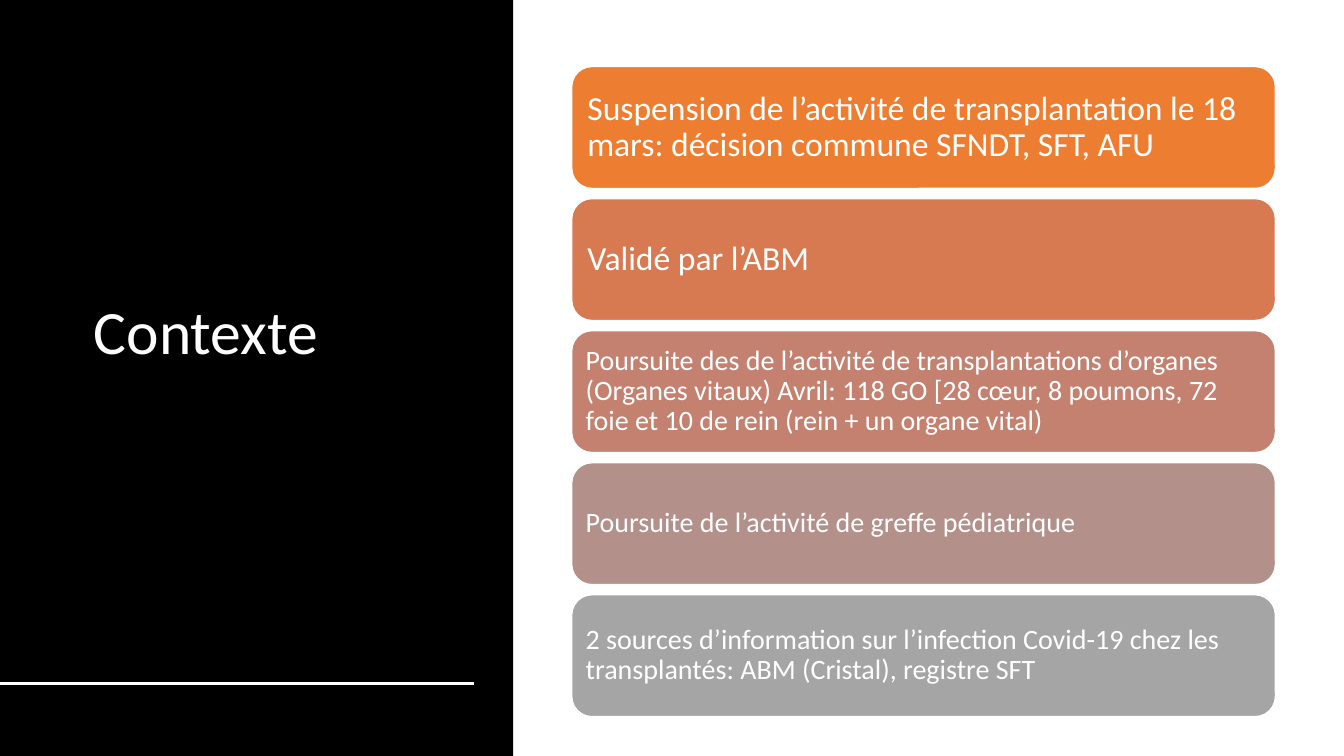
from lxml.etree import SubElement
from pptx import Presentation
from pptx.dml.color import RGBColor
from pptx.enum.shapes import MSO_CONNECTOR, MSO_SHAPE
from pptx.enum.text import MSO_ANCHOR, MSO_AUTO_SIZE, PP_ALIGN
from pptx.oxml.ns import qn
from pptx.util import Inches, Pt

TITLE = "Contexte"
CARDS = [
    ("Suspension de l’activité de transplantation le 18 mars: "
     "décision commune SFNDT, SFT, AFU", 24, "ED7D31"),
    ("Validé par l’ABM", 24, "D87A51"),
    ("Poursuite des de l’activité de transplantations d’organes "
     "(Organes vitaux) Avril: 118 GO [28 cœur, 8 poumons, 72 foie "
     "et 10 de rein (rein + un organe vital)", 20, "C48170"),
    ("Poursuite de l’activité de greffe pédiatrique", 20, "B4908B"),
    ("2 sources d’information sur l’infection Covid-19 chez les "
     "transplantés: ABM (Cristal), registre SFT", 20, "A5A5A5"),
]
WHITE, BLACK = "FFFFFF", "000000"
LEFT, TOP, WIDTH, HEIGHT, STEP = 5.67, 0.66, 6.98, 1.21, 1.31


def paint(target, color):
    target.solid()
    target.fore_color.rgb = RGBColor.from_string(color)


def write(shape, text, size=20, color=WHITE, font="Calibri", inset=0.1):
    frame = shape.text_frame
    frame.text = text
    frame.word_wrap = True
    frame.auto_size = MSO_AUTO_SIZE.NONE
    frame.vertical_anchor = MSO_ANCHOR.MIDDLE
    frame.margin_left = frame.margin_right = Inches(inset)
    frame.margin_top = frame.margin_bottom = Inches(inset)
    para = frame.paragraphs[0]
    para.alignment = PP_ALIGN.LEFT
    para.line_spacing = 0.9
    style = para.runs[0].font
    style.name, style.size = font, Pt(size)
    paint(style.fill, color)


def block(slide, kind, box, color):
    shape = slide.shapes.add_shape(kind, *map(Inches, box))
    shape.shadow.inherit = False
    paint(shape.fill, color)
    return shape


def main():
    deck = Presentation()
    deck.slide_width, deck.slide_height = Inches(13.33), Inches(7.5)
    slide = deck.slides.add_slide(deck.slide_layouts[5])

    panel = block(slide, MSO_SHAPE.RECTANGLE, (0, 0, 5.09, 7.5), BLACK)
    panel.line.fill.background()
    slide.shapes._spTree.insert(2, panel._element)

    title = slide.shapes.title
    title.left, title.top = Inches(0.83), Inches(0.61)
    title.width, title.height = Inches(3.9), Inches(5.42)
    write(title, TITLE, size=44)

    rule = slide.shapes.add_connector(
        MSO_CONNECTOR.STRAIGHT, 0, Inches(6.78), Inches(4.7), Inches(6.78))
    paint(rule.line.fill, WHITE)
    rule.line.width = Pt(2)
    SubElement(rule._element.spPr, qn("a:effectLst"))

    for row, (text, size, color) in enumerate(CARDS):
        box = (LEFT, TOP + row * STEP, WIDTH, HEIGHT)
        card = block(slide, MSO_SHAPE.ROUNDED_RECTANGLE, box, color)
        paint(card.line.fill, WHITE)
        card.line.width = Pt(1)
        write(card, text, size=size, inset=size / 250)

    deck.save("out.pptx")


if __name__ == "__main__":
    main()
